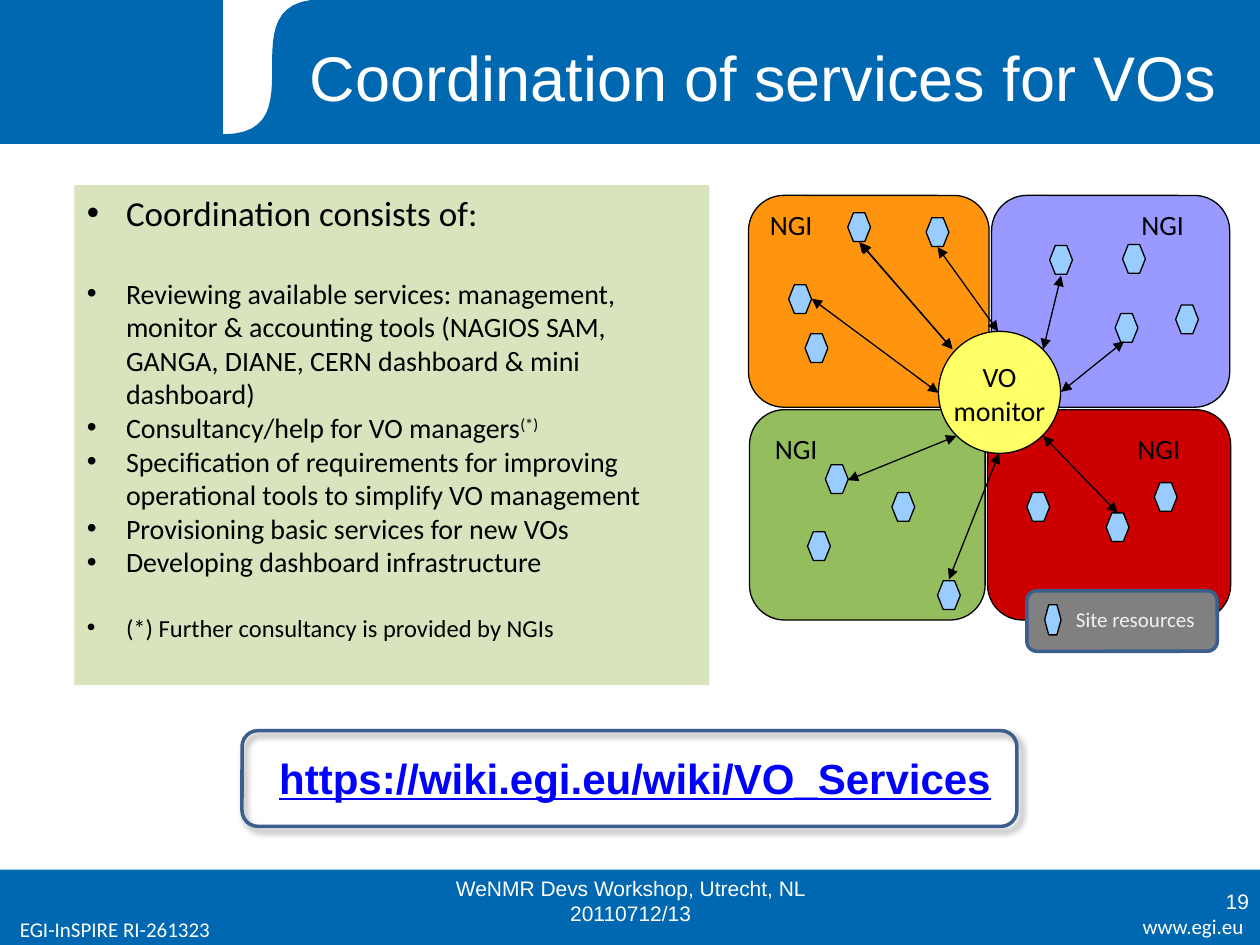
import lxml.etree
import pptx
import pptx.dml.color
import pptx.enum.shapes
import pptx.enum.text
import pptx.oxml.ns
import pptx.util

Cm, Pt = pptx.util.Cm, pptx.util.Pt
SHAPE = pptx.enum.shapes.MSO_SHAPE
ALIGN = pptx.enum.text.PP_ALIGN
ANCHOR = pptx.enum.text.MSO_ANCHOR
qn = pptx.oxml.ns.qn

BLUE, WHITE, BLACK = "0067B1", "FFFFFF", "000000"
SITE_FILL, FRAME = "99CCFF", "3A5F8C"

REGIONS = [  # left, top, width, height, fill
    (19.99, 3.94, 4.8, 4.27, "9999FF"),
    (19.91, 8.26, 4.9, 4.24, "CC0000"),
    (15.11, 8.26, 4.75, 4.24, "94BD5E"),
    (15.09, 3.94, 4.85, 4.27, "FF950E"),
]
REGION_LABELS = [(15.37, 8.53), (22.68, 8.53), (15.27, 4.01), (22.76, 4.01)]
SITES = [
    (15.9, 5.74), (17.09, 4.29), (18.67, 4.39), (16.23, 6.73),
    (21.16, 4.95), (22.63, 4.93), (22.48, 6.32), (23.7, 6.15),
    (16.64, 9.37), (18.9, 11.71), (17.98, 9.93), (16.28, 10.72),
    (22.3, 10.34), (23.27, 9.73), (20.7, 9.93),
]
ARROWS = [  # site end, monitor end
    (18.9, 4.98, 20.12, 6.68), (17.32, 4.88, 19.2, 7.04),
    (17.35, 4.9, 19.2, 7.04), (17.09, 9.68, 19.28, 8.79),
    (19.13, 11.68, 20.14, 9.14), (21.39, 5.56, 21.03, 7.04),
    (22.66, 6.88, 21.39, 7.9), (22.53, 10.34, 21.03, 8.79),
    (16.36, 6.02, 18.92, 7.92),
]
TASKS = [
    "Reviewing available services: management, monitor & accounting tools "
    "(NAGIOS SAM, GANGA, DIANE, CERN dashboard & mini dashboard)",
    "Consultancy/help for VO managers",
    "Specification of requirements for improving operational tools to "
    "simplify VO management",
    "Provisioning basic services for new VOs",
    "Developing dashboard infrastructure",
]


def rgb(value):
    return pptx.dml.color.RGBColor.from_string(value)


def paint(s, fill=None, line=None, width=0.75):
    s.shadow.inherit = False
    if fill:
        s.fill.solid()
        s.fill.fore_color.rgb = rgb(fill)
    else:
        s.fill.background()
    if line:
        s.line.color.rgb = rgb(line)
        s.line.width = Pt(width)
    else:
        s.line.fill.background()


def add_shape(slide, kind, box, fill=None, line=None, width=0.75):
    s = slide.shapes.add_shape(kind, *map(Cm, box))
    paint(s, fill, line, width)
    return s


def add_run(p, text, size, font="Calibri", color=BLACK, bold=False,
            underline=False):
    r = p.add_run()
    r.text = text
    r.font.size, r.font.name = Pt(size), font
    r.font.bold, r.font.underline = bold, underline
    r.font.color.rgb = rgb(color)
    return r


def write(tf, lines, size, align=ALIGN.LEFT, anchor=ANCHOR.TOP, wrap=True,
          insets=(0.25, 0.13, 0.25, 0.13), **fmt):
    tf.word_wrap, tf.vertical_anchor = wrap, anchor
    (tf.margin_left, tf.margin_top,
     tf.margin_right, tf.margin_bottom) = map(Cm, insets)
    for i, line in enumerate(lines):
        p = tf.add_paragraph() if i else tf.paragraphs[0]
        p.alignment = align
        add_run(p, line, size, **fmt)


def add_text(slide, box, text, size, **fmt):
    tb = slide.shapes.add_textbox(*map(Cm, box))
    write(tb.text_frame, [text], size, **fmt)


def add_arrow(slide, x1, y1, x2, y2):
    c = slide.shapes.add_connector(
        pptx.enum.shapes.MSO_CONNECTOR.STRAIGHT, *map(Cm, (x1, y1, x2, y2)))
    c.line.color.rgb = rgb(BLACK)
    c.line.width = Pt(0.75)
    ln = c.line._get_or_add_ln()
    for end in ("a:headEnd", "a:tailEnd"):
        lxml.etree.SubElement(ln, qn(end), type="triangle")
    lxml.etree.SubElement(c._element.spPr, qn("a:effectLst"))


def add_shadow(s):
    effects = s._element.spPr.find(qn("a:effectLst"))
    shadow = lxml.etree.SubElement(
        effects, qn("a:outerShdw"), blurRad=str(Pt(4)), dist=str(Pt(3)),
        dir="2700000", algn="tl", rotWithShape="0")
    color = lxml.etree.SubElement(shadow, qn("a:srgbClr"), val=BLACK)
    lxml.etree.SubElement(color, qn("a:alpha"), val="40000")


def bezier(p0, p1, p2, p3, steps=24):
    """Points along a cubic curve."""
    for i in range(steps + 1):
        t = i / steps
        u = 1 - t
        yield tuple(u**3 * a + 3 * u * u * t * b + 3 * u * t * t * c + t**3 * d
                    for a, b, c, d in zip(p0, p1, p2, p3))


def add_banner(slide):
    add_shape(slide, SHAPE.RECTANGLE, (0, 17.53, 25.4, 1.52), BLUE)
    add_shape(slide, SHAPE.RECTANGLE, (0, 0, 25.4, 2.9), BLUE, BLUE)
    add_shape(slide, SHAPE.RECTANGLE, (4.5, 0, 5, 2.72), WHITE, WHITE)
    curve = bezier((4.5, 2.72), (6.5, 2.72), (4.5, 0), (6.5, 0))
    fb = slide.shapes.build_freeform(Cm(9.5), Cm(2.72))
    fb.add_line_segments([(Cm(x), Cm(y)) for x, y in curve] + [(Cm(9.5), 0)])
    paint(fb.convert_to_shape(), BLUE, BLUE)


def add_title(slide, text):
    s = slide.shapes.title
    s.left, s.top, s.width, s.height = map(Cm, (5.89, 0.33, 19, 2.41))
    write(s.text_frame, [text], 36, align=ALIGN.CENTER, anchor=ANCHOR.MIDDLE,
          font="Arial", color=WHITE)
    slide.shapes._spTree.append(s._element)  # in front of the banner


def add_task_list(slide):
    s = slide.placeholders[1]
    s.left, s.top, s.width, s.height = map(Cm, (1.5, 3.73, 12.8, 10.08))
    s.fill.solid()
    s.fill.fore_color.rgb = rgb("D7E4BD")
    tf = s.text_frame
    tf.auto_size = pptx.enum.text.MSO_AUTO_SIZE.NONE
    write(tf, ["Coordination consists of:"], 20)
    for task in TASKS:
        add_run(tf.add_paragraph(), task, 16)
    note = tf.add_paragraph()
    add_run(note, "(*) Further consultancy is provided by NGIs", 14)

    heading, *tasks, note = tf.paragraphs
    for p in tf.paragraphs:
        pPr = p._p.get_or_add_pPr()
        if p in (heading, note):
            pPr.set("marL", "0")
            pPr.set("indent", "0")
            lxml.etree.SubElement(pPr, qn("a:buNone"))
        else:
            pPr.set("marL", str(Cm(0.79)))
            pPr.set("indent", str(-Cm(0.79)))
            lxml.etree.SubElement(pPr, qn("a:buFont"), typeface="Arial")
            lxml.etree.SubElement(pPr, qn("a:buChar"), char="•")
        p.space_before = Pt(0)
    tasks[0].space_before = Pt(24.4)
    note.space_before = Pt(19.5)
    mark = add_run(tasks[1], "(*)", 16)
    mark.font._element.set("baseline", "30000")


def add_map(slide):
    insets = (0.25, 0.18, 0.25, 0.13)
    for *box, fill in REGIONS:
        add_shape(slide, SHAPE.FLOWCHART_ALTERNATE_PROCESS, box, fill, BLACK)
    for x, y in REGION_LABELS:
        add_text(slide, (x, y, 1.9, 1.27), "NGI", 16, insets=insets)
    for x, y in SITES:
        add_shape(slide, SHAPE.HEXAGON, (x, y, 0.46, 0.58), SITE_FILL, BLACK)
    monitor = add_shape(slide, SHAPE.FLOWCHART_CONNECTOR,
                        (18.92, 6.68, 2.46, 2.46), "FFFF66", BLACK)
    write(monitor.text_frame, ["VO", "monitor"], 16, align=ALIGN.CENTER,
          anchor=ANCHOR.MIDDLE, wrap=False, insets=insets)
    for ends in ARROWS:
        add_arrow(slide, *ends)


def add_legend(slide):
    add_shape(slide, SHAPE.ROUNDED_RECTANGLE, (20.7, 11.91, 3.84, 1.22),
              "808080", FRAME, 2)
    add_shape(slide, SHAPE.HEXAGON, (21.06, 12.19, 0.33, 0.61), SITE_FILL, BLACK)
    add_text(slide, (21.44, 12.09, 2.95, 0.76), "Site resources", 12,
             color="F2F2F2", wrap=False)


def add_address(slide):
    add_text(slide, (4.7, 15.04, 16.21, 1.91),
             "https://wiki.egi.eu/wiki/VO_Services", 24, align=ALIGN.CENTER,
             font="Arial", color="0000FF", bold=True, underline=True)
    add_shadow(add_shape(slide, SHAPE.ROUNDED_RECTANGLE,
                         (4.88, 14.73, 15.62, 1.93), line=FRAME, width=2))


def add_footer(slide):
    add_text(slide, (21.31, 18.29, 4.01, 0.79), "www.egi.eu", 12,
             align=ALIGN.RIGHT, color=WHITE)
    add_text(slide, (0.15, 18.34, 6.35, 0.79), "EGI-InSPIRE RI-261323", 12,
             color=WHITE)
    arial = {"font": "Arial", "color": WHITE, "anchor": ANCHOR.MIDDLE}
    add_text(slide, (8.69, 17.65, 8.05, 1.02),
             "WeNMR Devs Workshop, Utrecht, NL 20110712/13", 12,
             align=ALIGN.CENTER, **arial)
    add_text(slide, (19.51, 17.65, 5.92, 1.02), "19", 12,
             align=ALIGN.RIGHT, **arial)


def main():
    prs = pptx.Presentation()
    prs.slide_width, prs.slide_height = Cm(25.4), Cm(19.05)
    slide = prs.slides.add_slide(prs.slide_layouts[1])
    add_banner(slide)
    add_title(slide, "Coordination of services for VOs")
    add_task_list(slide)
    add_map(slide)
    add_legend(slide)
    add_address(slide)
    add_footer(slide)
    prs.save("out.pptx")


if __name__ == "__main__":
    main()
